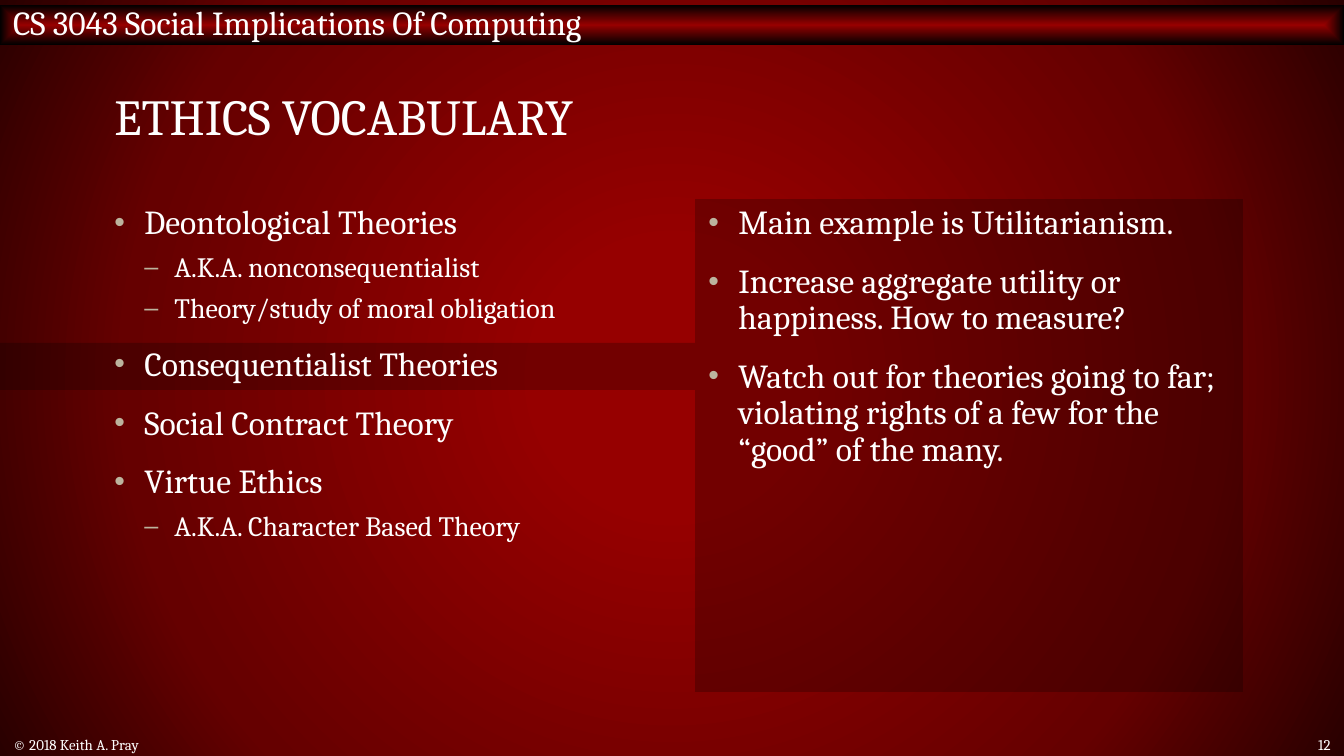
from lxml import etree
from pptx import Presentation
from pptx.dml.color import RGBColor
from pptx.enum.shapes import MSO_SHAPE
from pptx.enum.text import MSO_ANCHOR, MSO_AUTO_SIZE, PP_ALIGN
from pptx.oxml import parse_xml
from pptx.oxml.ns import nsdecls, qn
from pptx.util import Emu, Pt

RECTANGLE = MSO_SHAPE.RECTANGLE
TOP, MIDDLE = MSO_ANCHOR.TOP, MSO_ANCHOR.MIDDLE
LEFT, RIGHT = PP_ALIGN.LEFT, PP_ALIGN.RIGHT
NO_AUTOFIT = MSO_AUTO_SIZE.NONE

SLIDE_WIDTH, SLIDE_HEIGHT = 1344, 756
EMU_PER_PX = 9144000 / SLIDE_WIDTH
FONT = "Cambria"
COLORS = {
    "text": "FFFFFF",
    "bullet": "BCB49E",
    "shade": "000000",
    "bright": "960000",
    "medium": "650000",
    "dark": "290000",
}
SHADE_OPACITY = 24
INDENT = 30
# Per list level: bullet, font size, space before
LEVELS = [("•", 18, 12), ("–", 15, 6)]

COLUMN_TOP, COLUMN_WIDTH, COLUMN_HEIGHT = 199, 548, 493
LEFT_COLUMN = (101, COLUMN_TOP, COLUMN_WIDTH, COLUMN_HEIGHT)
RIGHT_COLUMN = (695, COLUMN_TOP, COLUMN_WIDTH, COLUMN_HEIGHT)
SELECTED_ROW = (0, 343, 695, 47)

THEORIES = [
    (0, "Deontological Theories"),
    (1, "A.K.A. nonconsequentialist"),
    (1, "Theory/study of moral obligation"),
    (0, "Consequentialist Theories"),
    (0, "Social Contract Theory"),
    (0, "Virtue Ethics"),
    (1, "A.K.A. Character Based Theory"),
]
CONSEQUENTIALISM = [
    (0, "Main example is Utilitarianism."),
    (0, "Increase aggregate utility or happiness. How to measure?"),
    (0, "Watch out for theories going to far; violating rights of a few for the “good” of the many."),
]


def px(length):
    return Emu(round(length * EMU_PER_PX))


def place(shape, box):
    shape.left, shape.top, shape.width, shape.height = map(px, box)


def set_gradient(fill, parent, kind, stops):
    """Fill outward from the centre; parent is the element that holds the fill."""
    fill.solid()
    stop_xml = "".join(
        f'<a:gs pos="{position * 1000}"><a:srgbClr val="{COLORS[color]}"/></a:gs>'
        for position, color in stops
    )
    gradient = parse_xml(
        f'<a:gradFill {nsdecls("a")} rotWithShape="1"><a:gsLst>{stop_xml}</a:gsLst>'
        f'<a:path path="{kind}"><a:fillToRect l="50000" t="50000" r="50000" b="50000"/>'
        "</a:path></a:gradFill>"
    )
    parent.replace(parent.find(qn("a:solidFill")), gradient)


def format_runs(paragraph, size):
    for run in paragraph.runs:
        run.font.name = FONT
        run.font.size = Pt(size)
        run.font.color.rgb = RGBColor.from_string(COLORS["text"])


def format_frame(text_frame, anchor):
    text_frame.word_wrap = True
    text_frame.auto_size = NO_AUTOFIT
    text_frame.vertical_anchor = anchor


def write_line(shape, text, size, alignment=LEFT):
    text_frame = shape.text_frame
    format_frame(text_frame, MIDDLE)
    text_frame.text = text
    paragraph = text_frame.paragraphs[0]
    paragraph.alignment = alignment
    format_runs(paragraph, size)
    return paragraph


def add_back_rectangle(slide, box):
    """Add a plain rectangle behind everything already on the slide."""
    shape = slide.shapes.add_shape(RECTANGLE, *map(px, box))
    shape.shadow.inherit = False
    shape.line.fill.background()
    slide.shapes.element.insert(2, shape.element)
    return shape


def add_shade(slide, box):
    shape = add_back_rectangle(slide, box)
    shape.fill.solid()
    shape.fill.fore_color.rgb = RGBColor.from_string(COLORS["shade"])
    color = shape.element.spPr.find(qn("a:solidFill"))[0]
    etree.SubElement(color, qn("a:alpha"), val=str(SHADE_OPACITY * 1000))


def add_header(slide, text):
    shape = add_back_rectangle(slide, (0, 5, SLIDE_WIDTH, 40))
    set_gradient(shape.fill, shape.element.spPr, "shape", [(0, "bright"), (100, "shade")])
    shape.text_frame.margin_top = 0
    write_line(shape, text, 18)


def add_footer(slide, box, text, alignment):
    write_line(slide.shapes.add_textbox(*map(px, box)), text, 8, alignment)


def set_bullet(paragraph, level, character):
    properties = paragraph._p.get_or_add_pPr()
    properties.set("marL", str(px(INDENT * (level + 1))))
    properties.set("indent", str(-px(INDENT)))
    color = etree.SubElement(properties, qn("a:buClr"))
    etree.SubElement(color, qn("a:srgbClr"), val=COLORS["bullet"])
    etree.SubElement(properties, qn("a:buSzPct"), val="90000")
    etree.SubElement(properties, qn("a:buFont"), typeface="Arial")
    etree.SubElement(properties, qn("a:buChar"), char=character)


def fill_list(placeholder, box, items):
    place(placeholder, box)
    text_frame = placeholder.text_frame
    format_frame(text_frame, TOP)
    text_frame.text = "\n".join(text for _, text in items)
    for index, (level, _) in enumerate(items):
        paragraph = text_frame.paragraphs[index]
        character, size, space_before = LEVELS[level]
        paragraph.level = level
        set_bullet(paragraph, level, character)
        paragraph.line_spacing = 0.9
        paragraph.space_before = Pt(space_before if index else 0)
        format_runs(paragraph, size)


def main():
    presentation = Presentation()
    presentation.slide_width = px(SLIDE_WIDTH)
    presentation.slide_height = px(SLIDE_HEIGHT)
    slide = presentation.slides.add_slide(presentation.slide_layouts.get_by_name("Two Content"))
    title, theories, details = list(slide.placeholders)[:3]

    background_fill = slide.background.fill
    background_fill.solid()
    set_gradient(
        background_fill,
        slide.element.xpath(".//p:bgPr")[0],
        "circle",
        [(17, "bright"), (71, "medium"), (100, "dark")],
    )

    place(title, (101, 54, 1142, 134))
    write_line(title, "ETHICS VOCABULARY", 27).line_spacing = 0.8
    fill_list(theories, LEFT_COLUMN, THEORIES)
    fill_list(details, RIGHT_COLUMN, CONSEQUENTIALISM)

    add_shade(slide, RIGHT_COLUMN)
    add_shade(slide, SELECTED_ROW)
    add_header(slide, "CS 3043 Social Implications Of Computing")

    add_footer(slide, (0, 734, 817, 22), "© 2018 Keith A. Pray", LEFT)
    add_footer(slide, (1253, 734, 91, 22), "12", RIGHT)
    presentation.save("out.pptx")


if __name__ == "__main__":
    main()
